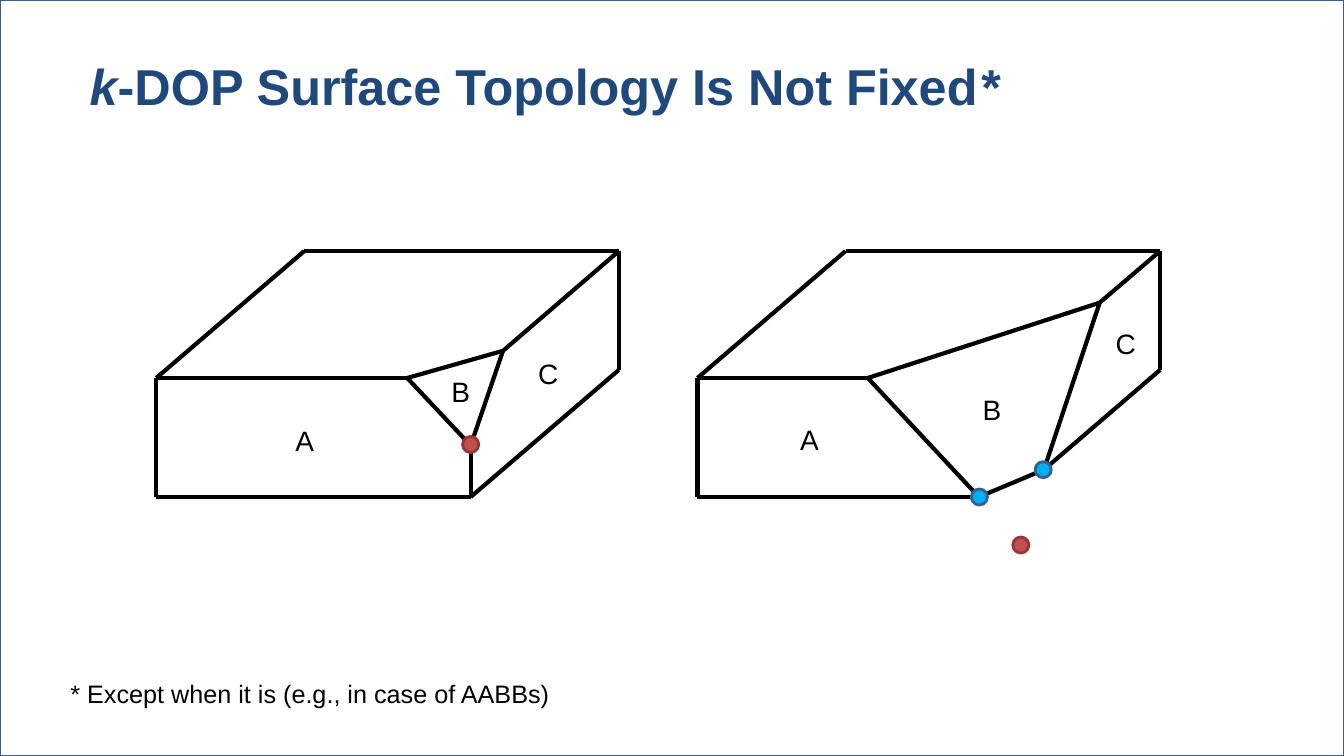
from dataclasses import dataclass

from lxml.etree import SubElement
from pptx import Presentation
from pptx.dml.color import RGBColor
from pptx.enum.shapes import MSO_CONNECTOR, MSO_SHAPE
from pptx.enum.text import MSO_ANCHOR, MSO_AUTO_SIZE, PP_ALIGN
from pptx.oxml.ns import qn
from pptx.shapes.shapetree import GroupShapes, SlideShapes
from pptx.text.text import Font
from pptx.util import Pt

Point = tuple[float, float]

FONT = "Arial"
WIDTH, HEIGHT = 960, 540
NAVY, BLACK, WHITE = "1F497D", "000000", "FFFFFF"
DOT_SIZE = 11.5


@dataclass(frozen=True)
class Dot:
    center: Point
    fill: str
    line: str


@dataclass(frozen=True)
class Solid:
    """A cut box; points are measured from its left edge and the slide top."""
    left: float
    vertices: dict[str, Point]
    edges: list[str]
    labels: dict[str, Point]


# Corners: a-e are shared by both boxes, f-i lie on the cut
SHARED_VERTICES: dict[str, Point] = {
    "a": (0, 270), "b": (0, 355), "c": (105.8, 179.3),
    "d": (330.5, 179.3), "e": (330.5, 264.2),
}
SHARED_EDGES = ["ab", "ac", "cd", "de", "af", "dg", "fg"]

SOLIDS = [
    Solid(111.6,
          {"f": (179.3, 270), "g": (247.7, 250.6), "h": (224.6, 318.2), "i": (224.6, 355)},
          ["bi", "ie", "hi", "fh", "gh"],
          {"A": (92.2, 298.8), "B": (203.8, 264.2), "C": (265.7, 251.3)}),
    Solid(498.2,
          {"f": (121.7, 270), "g": (287.3, 216.2), "h": (247.5, 335.5), "i": (201, 355)},
          ["bi", "he", "hi", "fi", "gh"],
          {"A": (66.3, 298.1), "B": (196.6, 276.5), "C": (291.6, 229.7)}),
]

RED, BLUE = ("C0504D", "953735"), ("00B0F0", "376092")
DOTS = [
    Dot((336.2, 317.5), *RED),
    Dot((729.2, 389.3), *RED),
    Dot((745.2, 335.5), *BLUE),
    Dot((699.6, 355), *BLUE),
]


def color(value: str) -> RGBColor:
    return RGBColor.from_string(value)


def style(font: Font, size: float, ink: str, bold: bool = False) -> None:
    font.name, font.size, font.bold = FONT, Pt(size), bold
    font.color.rgb = color(ink)


def add_preset(shapes: SlideShapes, preset: MSO_SHAPE, left: float, top: float,
               width: float, height: float, fill: str, line: str):
    shape = shapes.add_shape(preset, Pt(left), Pt(top), Pt(width), Pt(height))
    shape.shadow.inherit = False
    shape.fill.solid()
    shape.fill.fore_color.rgb = color(fill)
    shape.line.color.rgb = color(line)
    shape.line.width = Pt(2)
    return shape


def add_text(shapes: SlideShapes | GroupShapes, text: str, left: float, top: float,
             width: float, height: float, size: float, ink: str = BLACK,
             bold: bool = False, wrap: bool = True,
             anchor: MSO_ANCHOR = MSO_ANCHOR.TOP) -> None:
    box = shapes.add_textbox(Pt(left), Pt(top), Pt(width), Pt(height))
    box.text_frame.word_wrap = wrap
    box.text_frame.vertical_anchor = anchor
    para = box.text_frame.paragraphs[0]
    para.text = text
    style(para.font, size, ink, bold)


def add_edge(shapes: GroupShapes, start: Point, end: Point) -> None:
    edge = shapes.add_connector(MSO_CONNECTOR.STRAIGHT, *map(Pt, start + end))
    edge.line.color.rgb = color(BLACK)
    edge.line.width = Pt(3)
    SubElement(edge.element.spPr, qn("a:effectLst"))


def add_solid(shapes: SlideShapes, solid: Solid) -> None:
    group = shapes.add_group_shape()
    corners = {name: (solid.left + x, y)
               for name, (x, y) in (SHARED_VERTICES | solid.vertices).items()}
    for start, end in SHARED_EDGES + solid.edges:
        add_edge(group.shapes, corners[start], corners[end])
    for letter, (x, y) in solid.labels.items():
        add_text(group.shapes, letter, solid.left + x, y, 28.5, 31.5, 20, wrap=False)


def add_dot(shapes: SlideShapes, dot: Dot) -> None:
    x, y = dot.center
    add_preset(shapes, MSO_SHAPE.OVAL, x - DOT_SIZE / 2, y - DOT_SIZE / 2,
               DOT_SIZE, DOT_SIZE, dot.fill, dot.line)


def main() -> None:
    deck = Presentation()
    deck.slide_width, deck.slide_height = Pt(WIDTH), Pt(HEIGHT)
    page = deck.slides.add_slide(deck.slide_layouts[5])
    shapes = page.shapes

    # Page frame, behind everything
    frame = add_preset(shapes, MSO_SHAPE.RECTANGLE, 0, 0, WIDTH, HEIGHT, WHITE, "3A5F8C")
    shapes.title.element.addprevious(frame.element)

    # Title, with its footnote mark
    title = shapes.title
    title.left, title.top, title.width, title.height = Pt(56.9), Pt(21.6), Pt(903.1), Pt(78.5)
    title.text_frame.auto_size = MSO_AUTO_SIZE.NONE
    title.text_frame.vertical_anchor = MSO_ANCHOR.MIDDLE
    para = title.text_frame.paragraphs[0]
    para.alignment = PP_ALIGN.LEFT
    style(para.font, 36, NAVY, bold=True)
    for text, italic in (("k", True), ("-DOP Surface Topology Is Not Fixed", False)):
        span = para.add_run()
        span.text = text
        span.font.italic = italic
    add_text(shapes, "*", 694, 21.6, 266, 78.5, 36, NAVY, bold=True,
             anchor=MSO_ANCHOR.MIDDLE)

    # Boxes and marked vertices
    for solid in SOLIDS:
        add_solid(shapes, solid)
    for dot in DOTS:
        add_dot(shapes, dot)

    # Footnote
    add_text(shapes, "* Except when it is (e.g., in case of AABBs)", 43.2, 481, 480, 29, 18)

    deck.save("out.pptx")


if __name__ == "__main__":
    main()
